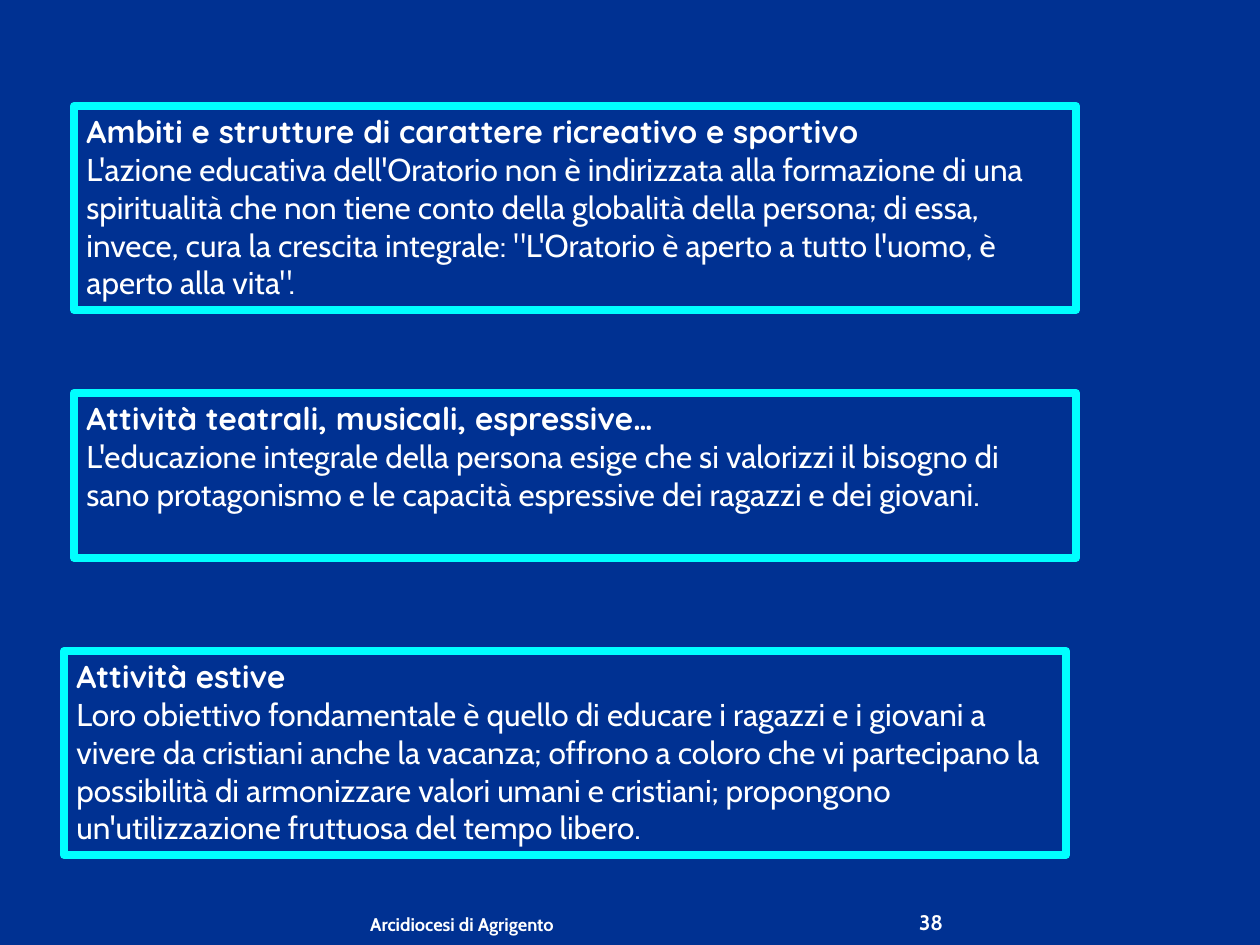
from pptx import Presentation
from pptx.dml.color import RGBColor
from pptx.enum.shapes import MSO_SHAPE as Kind
from pptx.enum.text import MSO_ANCHOR as Anchor, PP_ALIGN as Align
from pptx.util import Pt

SCALE = 914400 / 126
WHITE, CYAN, NAVY = "FFFFFF", "00FFFF", "003192"
HEAD = {"name": "Quicksand", "size": Pt(18), "bold": True}
BODY = {"name": "Cabin", "size": Pt(18), "bold": False}
FOOT = {"name": "Cabin", "size": Pt(10.5), "bold": True}
PAGE = {**FOOT, "size": Pt(12)}

PANELS = [
    ((74, 106, 1002, 204), "Ambiti e strutture di carattere ricreativo e sportivo",
     "L'azione educativa dell'Oratorio non è indirizzata alla formazione di una "
     "spiritualità che non tiene conto della globalità della persona; di essa, "
     "invece, cura la crescita integrale: \"L'Oratorio è aperto a tutto l'uomo, è "
     "aperto alla vita\"."),
    ((74, 393, 1002, 165), "Attività teatrali, musicali, espressive…",
     "L'educazione integrale della persona esige che si valorizzi il bisogno di "
     "sano protagonismo e le capacità espressive dei ragazzi e dei giovani."),
    ((64, 651, 1002, 204), "Attività estive",
     "Loro obiettivo fondamentale è quello di educare i ragazzi e i giovani a "
     "vivere da cristiani anche la vacanza; offrono a coloro che vi partecipano la "
     "possibilità di armonizzare valori umani e cristiani; propongono "
     "un'utilizzazione fruttuosa del tempo libero."),
]


def px(n):
    return round(n * SCALE)


def paint(color, code):
    color.rgb = RGBColor.from_string(code)


def apply(item, values):
    for key, value in values.items():
        setattr(item, key, value)


def write(para, text, style, align):
    para.alignment = align
    run = para.add_run()
    run.text = text
    apply(run.font, style)
    paint(run.font.color, WHITE)


def panel(slide, box, title, body):
    shape = slide.shapes.add_shape(Kind.RECTANGLE, *map(px, box))
    shape.shadow.inherit = False
    shape.fill.background()
    paint(shape.line.color, CYAN)
    shape.line.width = Pt(4.5)
    frame = shape.text_frame
    apply(frame, {"word_wrap": True, "vertical_anchor": Anchor.TOP})
    write(frame.paragraphs[0], title, HEAD, Align.LEFT)
    write(frame.add_paragraph(), body, BODY, Align.LEFT)


def label(slide, box, text, style, pad):
    frame = slide.shapes.add_textbox(*map(px, box)).text_frame
    apply(frame, {"word_wrap": True, "vertical_anchor": Anchor.BOTTOM,
                  "margin_left": px(pad), "margin_right": px(pad),
                  "margin_top": 0, "margin_bottom": 0})
    write(frame.paragraphs[0], text, style, Align.RIGHT)


def footer(slide, box):
    left, top, width, height = box
    label(slide, (left, top, 504, height), "Arcidiocesi di Agrigento", FOOT, 13)
    label(slide, (left + width - 81, top, 81, height), "38", PAGE, 0)


def main():
    deck = Presentation()
    apply(deck, {"slide_width": px(1260), "slide_height": px(945)})
    slide = deck.slides.add_slide(deck.slide_layouts[6])
    fill = slide.background.fill
    fill.solid()
    paint(fill.fore_color, NAVY)
    footer(slide, (63, 903, 880, 32))
    for box, title, body in PANELS:
        panel(slide, box, title, body)
    deck.save("out.pptx")


if __name__ == "__main__":
    main()
